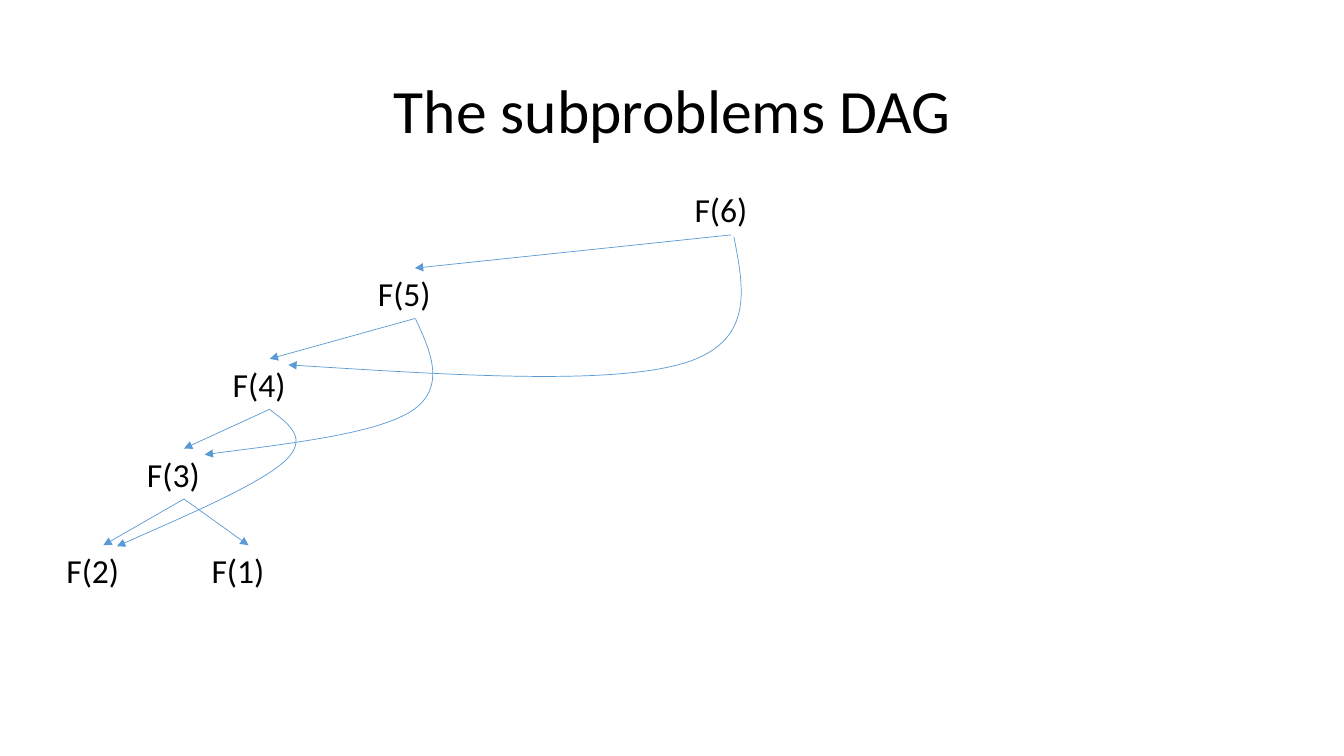
"""Build a slide with the graph of subproblems behind F(6)."""
from dataclasses import dataclass

from pptx import Presentation
from pptx.dml.color import RGBColor
from pptx.enum.shapes import MSO_CONNECTOR
from pptx.enum.text import MSO_ANCHOR, MSO_AUTO_SIZE, PP_ALIGN
from pptx.oxml.ns import qn
from pptx.oxml.xmlchemy import OxmlElement
from pptx.util import Inches, Pt

STRAIGHT = MSO_CONNECTOR.STRAIGHT
MIDDLE = MSO_ANCHOR.MIDDLE
GROW = MSO_AUTO_SIZE.SHAPE_TO_FIT_TEXT
CENTER = PP_ALIGN.CENTER
TOP, BOTTOM = 0, 2
FONT = "Calibri"
INK = "000000"
BLUE = "5B9BD5"


@dataclass
class Node:
    num: int
    left: float
    top: float


@dataclass
class Curve:
    width: float
    height: float
    points: list[tuple[float, float]]


NODES = [
    Node(6, 6.79, 1.83),
    Node(5, 3.65, 2.66),
    Node(4, 2.21, 3.56),
    Node(3, 1.36, 4.45),
    Node(2, 0.56, 5.41),
    Node(1, 2, 5.41),
]
LINKS = [(6, 5), (5, 4), (4, 3), (3, 1), (3, 2)]
CURVES = [
    Curve(1.78, 1.36, [(2.67, 4.06), (2.87, 4.21), (3.07, 4.35), (2.82, 4.58),
                       (2.56, 4.81), (1.86, 5.11), (1.16, 5.42)]),
    Curve(2.26, 1.35, [(4.12, 3.16), (4.28, 3.5), (4.43, 3.85), (4.08, 4.08),
                       (3.73, 4.3), (2.88, 4.4), (2.03, 4.51)]),
    Curve(4.5, 1.38, [(7.28, 2.35), (7.38, 2.87), (7.49, 3.4), (6.76, 3.61),
                      (6.02, 3.82), (4.44, 3.72), (2.86, 3.62)]),
]


def color(code: str) -> RGBColor:
    return RGBColor.from_string(code)


def style_text(para, size: float) -> None:
    for run in para.runs:
        run.font.name = FONT
        run.font.size = Pt(size)
        run.font.color.rgb = color(INK)


def style_line(line) -> None:
    line.color.rgb = color(BLUE)
    line.width = Pt(0.5)
    tail = OxmlElement("a:tailEnd")
    tail.set("type", "triangle")
    line._get_or_add_ln().append(tail)


def set_title(title, text: str) -> None:
    title.left, title.top = Inches(0.92), Inches(0.4)
    title.width, title.height = Inches(11.5), Inches(1.45)
    frame = title.text_frame
    frame.text = text
    frame.vertical_anchor = MIDDLE
    para = frame.paragraphs[0]
    para.alignment = CENTER
    para.line_spacing = 0.9
    style_text(para, 44)


def add_node(shapes, node: Node):
    box = shapes.add_textbox(Inches(node.left), Inches(node.top), Inches(0.93), Inches(0.5))
    frame = box.text_frame
    frame.text = f"F({node.num})"
    frame.word_wrap = True
    frame.auto_size = GROW
    style_text(frame.paragraphs[0], 24)
    return box


def add_link(shapes, start, end) -> None:
    link = shapes.add_connector(STRAIGHT, 0, 0, 0, 0)
    link.begin_connect(start, BOTTOM)
    link.end_connect(end, TOP)
    style_line(link.line)
    link._element.spPr.append(OxmlElement("a:effectLst"))


def add_curve(shapes, curve: Curve) -> None:
    points = [(Inches(x), Inches(y)) for x, y in curve.points]
    pen = shapes.build_freeform(*points[0])
    pen.add_line_segments(points[1:], close=False)
    shape = pen.convert_to_shape()
    shape.width, shape.height = Inches(curve.width), Inches(curve.height)
    route = next(shape._element.iter(qn("a:path")))
    route.set("w", str(shape.width))
    route.set("h", str(shape.height))
    steps = route.findall(qn("a:lnTo"))
    for i in range(0, len(steps), 3):
        bend = OxmlElement("a:cubicBezTo")
        for step in steps[i:i + 3]:
            bend.append(step[0])
            route.remove(step)
        route.append(bend)
    shape.fill.background()
    shape.shadow.inherit = False
    style_line(shape.line)


def main() -> None:
    deck = Presentation()
    deck.slide_width, deck.slide_height = Inches(13.33), Inches(7.5)
    shapes = deck.slides.add_slide(deck.slide_layouts[5]).shapes
    set_title(shapes.title, "The subproblems DAG")
    boxes = {node.num: add_node(shapes, node) for node in NODES}
    for start, end in LINKS:
        add_link(shapes, boxes[start], boxes[end])
    for curve in CURVES:
        add_curve(shapes, curve)
    deck.save("out.pptx")


if __name__ == "__main__":
    main()
